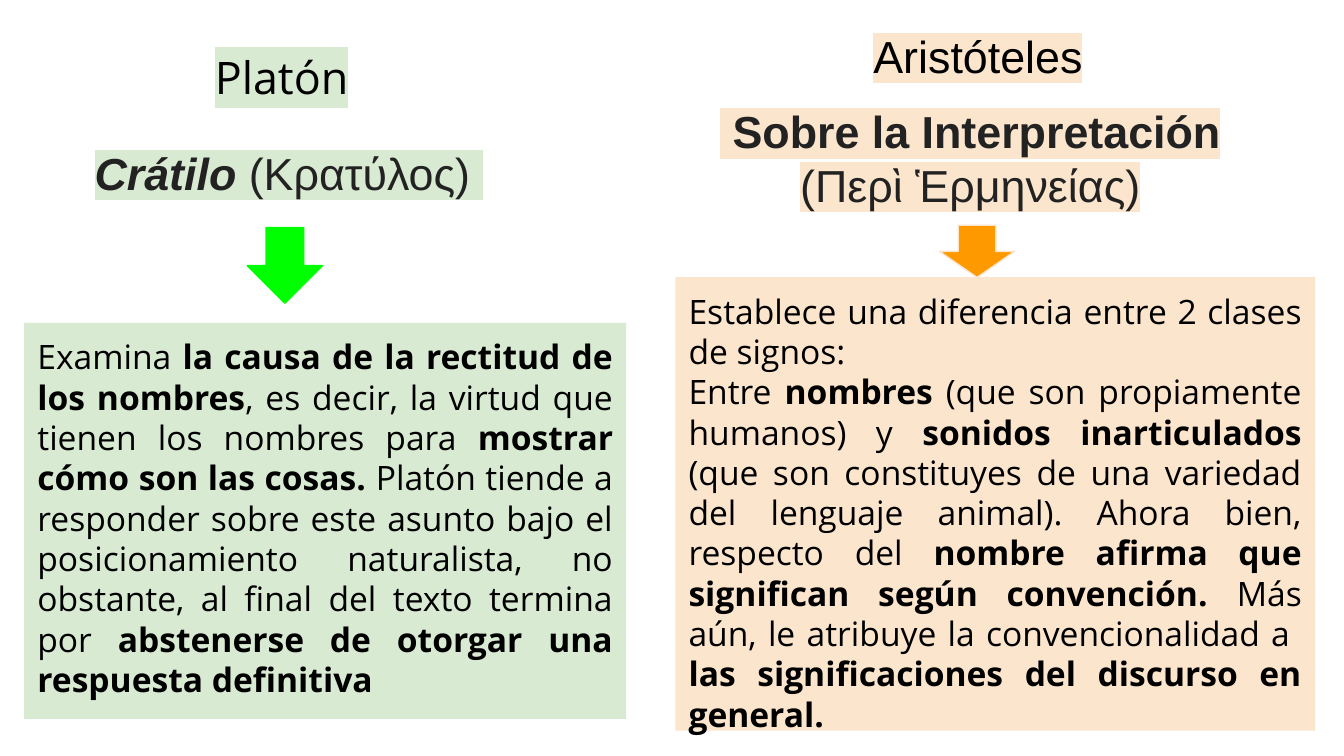
from pptx import Presentation
from pptx.dml.color import RGBColor
from pptx.enum.shapes import MSO_SHAPE
from pptx.enum.text import MSO_ANCHOR, PP_ALIGN
from pptx.oxml import parse_xml
from pptx.oxml.ns import nsdecls, qn
from pptx.util import Inches, Pt

hues = {
    "black": "000000", "gray": "222222", "mint": "D9EAD3",
    "peach": "FCE5CD", "green": "00FF00", "orange": "FF9900",
}

deck = Presentation()
deck.slide_width = Inches(10)
deck.slide_height = deck.slide_width * 9 // 16
col = deck.slide_width / 100
row = deck.slide_height / 100
slide = deck.slides.add_slide(deck.slide_layouts[6])


def place(left, top, wide, high, kind=None, fill=None, line=None):
    area = [round(n) for n in (left * col, top * row, wide * col, high * row)]
    if kind is None:
        return slide.shapes.add_textbox(*area)
    shape = slide.shapes.add_shape(kind, *area)
    shape.shadow.inherit = False
    shape.fill.solid()
    shape.fill.fore_color.rgb = RGBColor.from_string(hues[fill])
    if line:
        shape.line.color.rgb = RGBColor.from_string(hues[line])
        shape.line.width = Pt(0.75)
    else:
        shape.line.fill.background()
    return shape


def write(shape, text, size=24, face="Arial", hue="black", mark=None,
          align=PP_ALIGN.LEFT, slant=False):
    frame = shape.text_frame
    frame.word_wrap = True
    frame.vertical_anchor = MSO_ANCHOR.TOP
    frame.margin_left = frame.margin_right = Inches(0.1)
    frame.margin_top = frame.margin_bottom = Inches(0.1)
    for spot, part in enumerate(text.split("\n")):
        para = frame.add_paragraph() if spot else frame.paragraphs[0]
        para.alignment = align
        for turn, piece in enumerate(part.split("*")):
            if not piece:
                continue
            run = para.add_run()
            run.text = piece
            font = run.font
            font.size = Pt(size)
            font.name = face
            font.bold = turn % 2 == 1
            font.italic = slant and font.bold
            font.color.rgb = RGBColor.from_string(hues[hue])
            if mark:
                glow = parse_xml(
                    f'<a:highlight {nsdecls("a")}>'
                    f'<a:srgbClr val="{hues[mark]}"/></a:highlight>')
                run._r.rPr.find(qn("a:solidFill")).addnext(glow)


write(place(6.05, 17.5, 32, 12.6), "*Crátilo* (Κρατύλος) ",
      hue="gray", mark="mint", slant=True)
place(18.4, 30.1, 5.6, 10, MSO_SHAPE.DOWN_ARROW, "green", "green")
write(place(15, 4.8, 12.5, 12.6), "Platón", face="Open Sans", mark="mint")
write(place(51.9, 12, 40.6, 17.8),
      "* Sobre la Interpretación* (Περὶ Ἑρμηνείας)",
      hue="gray", mark="peach", align=PP_ALIGN.CENTER)
write(place(64, 2.05, 18.9, 10), "Aristóteles", mark="peach")
place(69.9, 29.8, 5.6, 6.9, MSO_SHAPE.DOWN_ARROW, "orange", "peach")

views = [
    ((50.25, 36.65, 47.6, 60), "peach",
     "Establece una diferencia entre 2 clases de signos:\n"
     "Entre *nombres* (que son propiamente humanos) y *sonidos inarticulados* "
     "(que son constituyes de una variedad del lenguaje animal). Ahora bien, "
     "respecto del *nombre afirma que significan según convención.* Más aún, "
     "le atribuye la convencionalidad a  "
     "*las significaciones del discurso en general.*"),
    ((1.8, 42.7, 44.8, 52.4), "mint",
     "Examina *la causa de la rectitud de los nombres*, es decir, la virtud "
     "que tienen los nombres para *mostrar cómo son las cosas. *Platón tiende "
     "a responder sobre este asunto bajo el posicionamiento naturalista, no "
     "obstante, al final del texto termina por "
     "*abstenerse de otorgar una respuesta definitiva*"),
]
for area, tint, text in views:
    write(place(*area, MSO_SHAPE.RECTANGLE, tint), text,
          size=18, face="Open Sans", align=PP_ALIGN.JUSTIFY)

deck.save("out.pptx")
